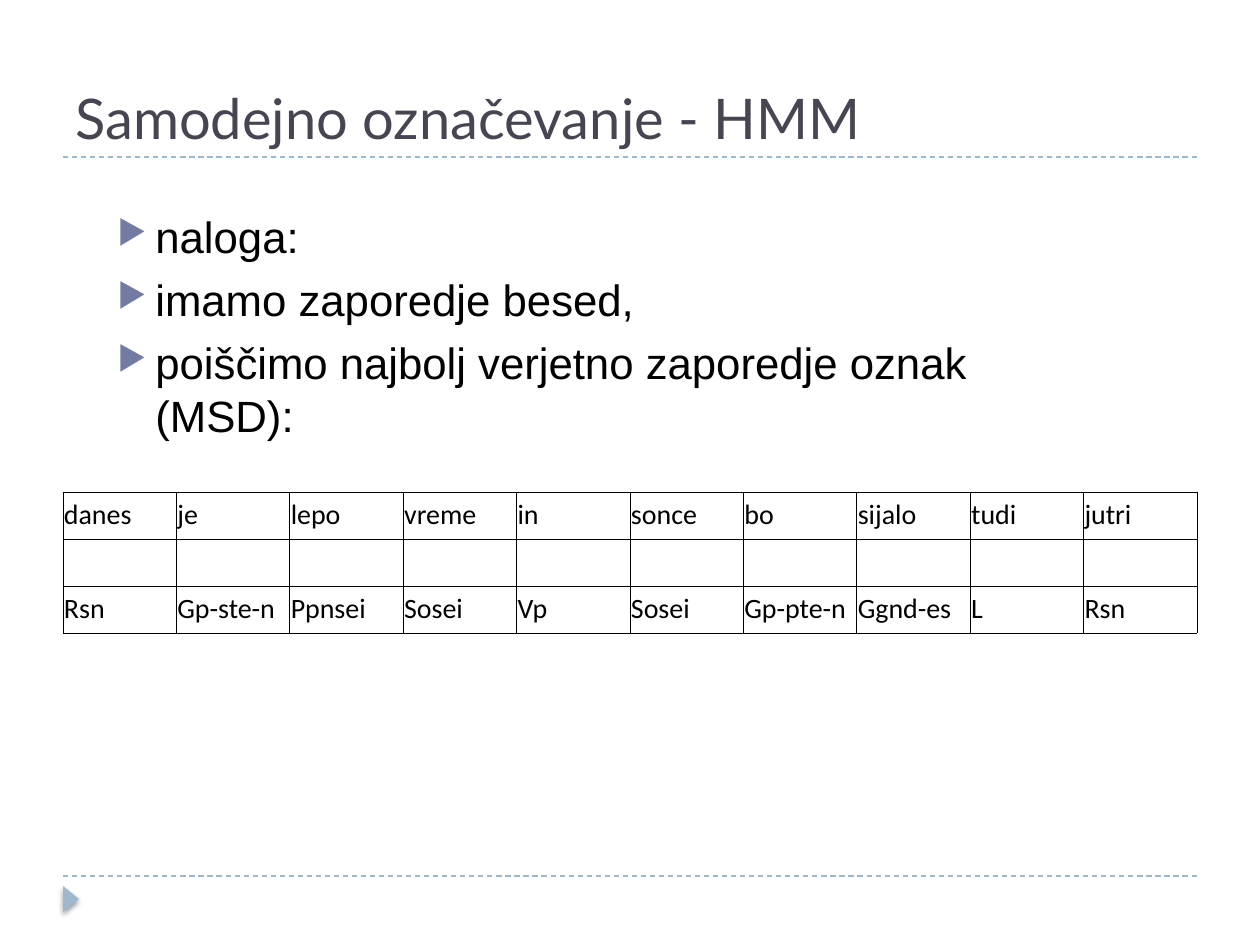
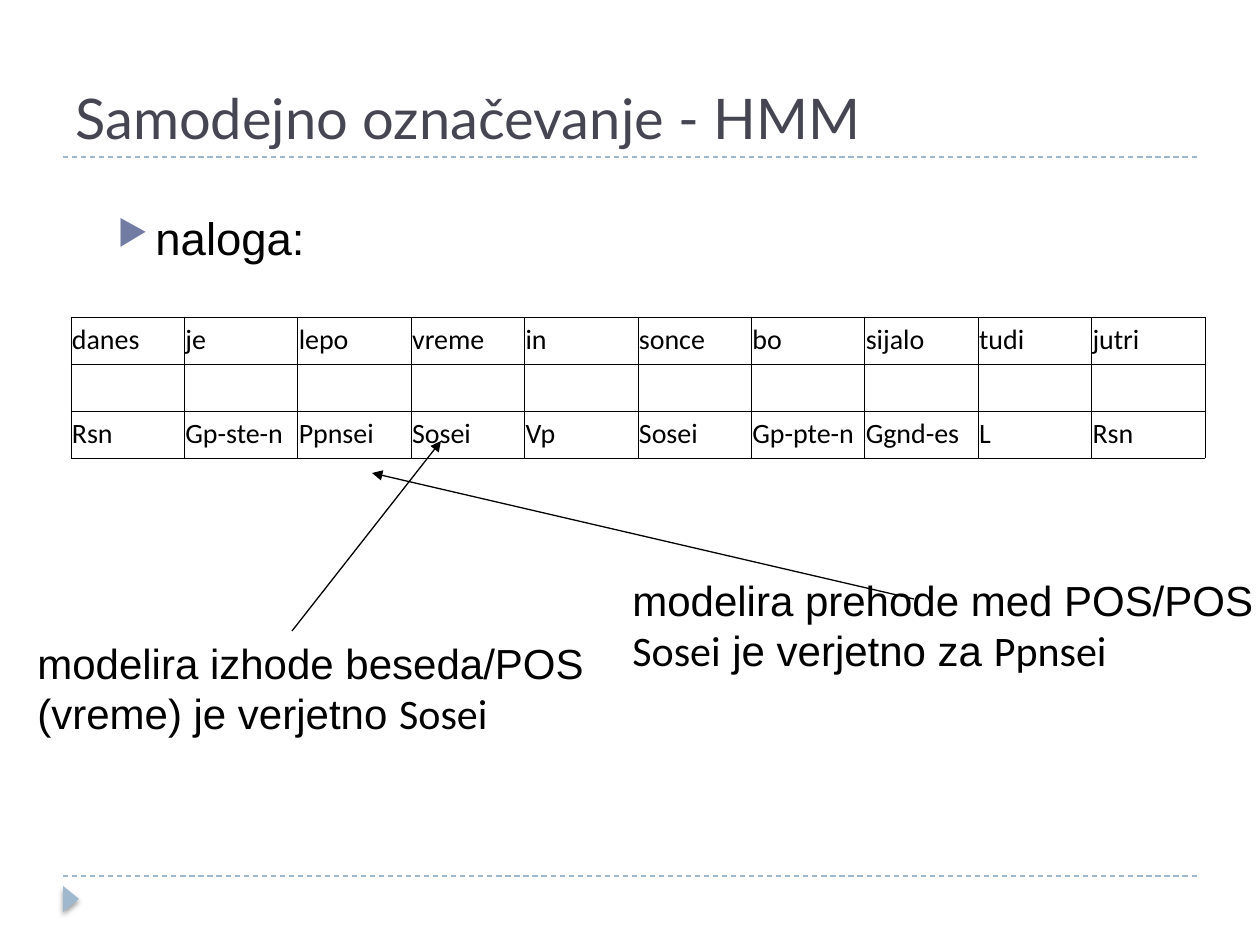
"""Build two slides on automatic tagging with a hidden Markov model."""
import lxml.etree
import pptx
import pptx.dml.color
import pptx.enum.dml
import pptx.enum.shapes
import pptx.enum.text
import pptx.oxml.ns
import pptx.util

SCALE = 914400 / 126
INK, TITLE, RULE, MARK = "000000", "464653", "9FB8CD", "727CA3"
HEAD = "Samodejno označevanje - HMM"
TASK = "naloga:"
WORDS = "danes je lepo vreme in sonce bo sijalo tudi jutri".split()
TAGS = "Rsn Gp-ste-n Ppnsei Sosei Vp Sosei Gp-pte-n Ggnd-es L Rsn".split()


def px(n):
    return pptx.util.Emu(round(n * SCALE))


def color(code):
    return pptx.dml.color.RGBColor.from_string(code)


def node(parent, tag, **attrs):
    return lxml.etree.SubElement(parent, pptx.oxml.ns.qn(tag), attrs)


class Deck:
    """Holds the style and the current slide."""

    def __init__(self):
        self.prs = pptx.Presentation()
        self.prs.slide_width, self.prs.slide_height = px(1260), px(945)
        self.slide = None

    def page(self):
        self.slide = self.prs.slides.add_slide(self.prs.slide_layouts[6])
        for y in (876, 157):
            rule = self.line((63, y), (1197, y), RULE)
            rule.line.dash_style = pptx.enum.dml.MSO_LINE.DASH
        self.mark()
        self.text((63, 21, 1134, 136), [[(HEAD, "Lato")]], 32, TITLE,
                  pptx.enum.text.MSO_ANCHOR.BOTTOM)

    def line(self, start, end, code=INK):
        line = self.slide.shapes.add_connector(
            pptx.enum.shapes.MSO_CONNECTOR.STRAIGHT,
            *map(px, start + end))
        line.line.color.rgb = color(code)
        line.line.width = pptx.util.Pt(0.75)
        node(line._element.spPr, "a:effectLst")
        return line

    def arrow(self, start, end):
        line = self.line(start, end)
        node(line.line._get_or_add_ln(), "a:tailEnd", type="triangle")

    def mark(self):
        kind = pptx.enum.shapes.MSO_SHAPE.ISOSCELES_TRIANGLE
        mark = self.slide.shapes.add_shape(kind, *map(px, (58, 891, 26, 16)))
        mark.rotation = 90
        mark.fill.solid()
        mark.fill.fore_color.rgb = color(RULE)
        mark.line.fill.background()
        mark.shadow.inherit = False
        effect = mark._element.spPr.find(pptx.oxml.ns.qn("a:effectLst"))
        shade = node(effect, "a:outerShdw", blurRad="39370", dist="20320",
                     dir="5400000", rotWithShape="0")
        node(node(shade, "a:srgbClr", val=INK), "a:alpha", val="38000")

    def text(self, box, rows, size, code=INK,
             anchor=pptx.enum.text.MSO_ANCHOR.TOP):
        frame = self.slide.shapes.add_textbox(*map(px, box)).text_frame
        frame.word_wrap = True
        frame.vertical_anchor = anchor
        for i, row in enumerate(rows):
            para = frame.add_paragraph() if i else frame.paragraphs[0]
            para.font.size = pptx.util.Pt(size)
            para.font.color.rgb = color(code)
            fonts = {font for _, font in row}
            if len(fonts) == 1:
                para.font.name = fonts.pop()
            for words, font in row:
                run = para.add_run()
                run.text = words
                if len(row) > 1:
                    run.font.name = font
        return frame

    def bullets(self, box, items, size):
        frame = self.text(box, [[(item, "Arial")] for item in items], size)
        for para in frame.paragraphs:
            para.space_before = pptx.util.Pt(6)
            props = para._p.get_or_add_pPr()
            props.set("marL", str(px(38)))
            props.set("indent", str(px(-38)))
            tint = lxml.etree.Element(pptx.oxml.ns.qn("a:buClr"))
            node(tint, "a:srgbClr", val=MARK)
            props.find(pptx.oxml.ns.qn("a:defRPr")).addprevious(tint)
            for tag, attrs in (("a:buChar", {"char": "▶"}),
                               ("a:buSzPct", {"val": "76000"})):
                item = lxml.etree.Element(pptx.oxml.ns.qn(tag), attrs)
                tint.addnext(item)

    def table(self, left, top):
        rows = [WORDS, [""] * len(WORDS), TAGS]
        grid = self.slide.shapes.add_table(
            len(rows), len(WORDS), px(left), px(top), px(1134), px(141)).table
        grid.first_row = grid.horz_banding = False
        for r, row in enumerate(rows):
            for c, word in enumerate(row):
                self.cell(grid.cell(r, c), word)

    def cell(self, cell, word):
        cell.text = word
        cell.margin_left = cell.margin_right = px(1)
        font = cell.text_frame.paragraphs[0].font
        font.size, font.name = pptx.util.Pt(16), "Calibri"
        font.color.rgb = color(INK)
        props = cell._tc.get_or_add_tcPr()
        for side in "LRTB":
            edge = node(props, "a:ln" + side, w="6350")
            node(node(edge, "a:solidFill"), "a:srgbClr", val=INK)
        cell.fill.background()


def main():
    deck = Deck()
    deck.page()
    deck.bullets((105, 204, 1002, 655),
                 [TASK, "imamo zaporedje besed,",
                  "poiščimo najbolj verjetno zaporedje oznak (MSD):"], 25)
    deck.table(63, 492)

    deck.page()
    deck.bullets((105, 204, 1002, 218), [TASK], 26)
    deck.text((25, 631, 605, 113),
              [[("modelira izhode beseda/POS", "Arial")],
               [("(vreme) je verjetno ", "Arial"), ("Sosei", "Calibri")]], 24)
    deck.text((620, 568, 655, 113),
              [[("modelira prehode med POS/POS", "Arial")],
               [("Sosei", "Calibri"), (" je verjetno za ", "Arial"),
                ("Ppnsei", "Calibri")]], 24)
    deck.arrow((292, 631), (441, 441))
    deck.arrow((914, 599), (372, 473))
    deck.table(71, 317)
    deck.prs.save("out.pptx")


if __name__ == "__main__":
    main()
